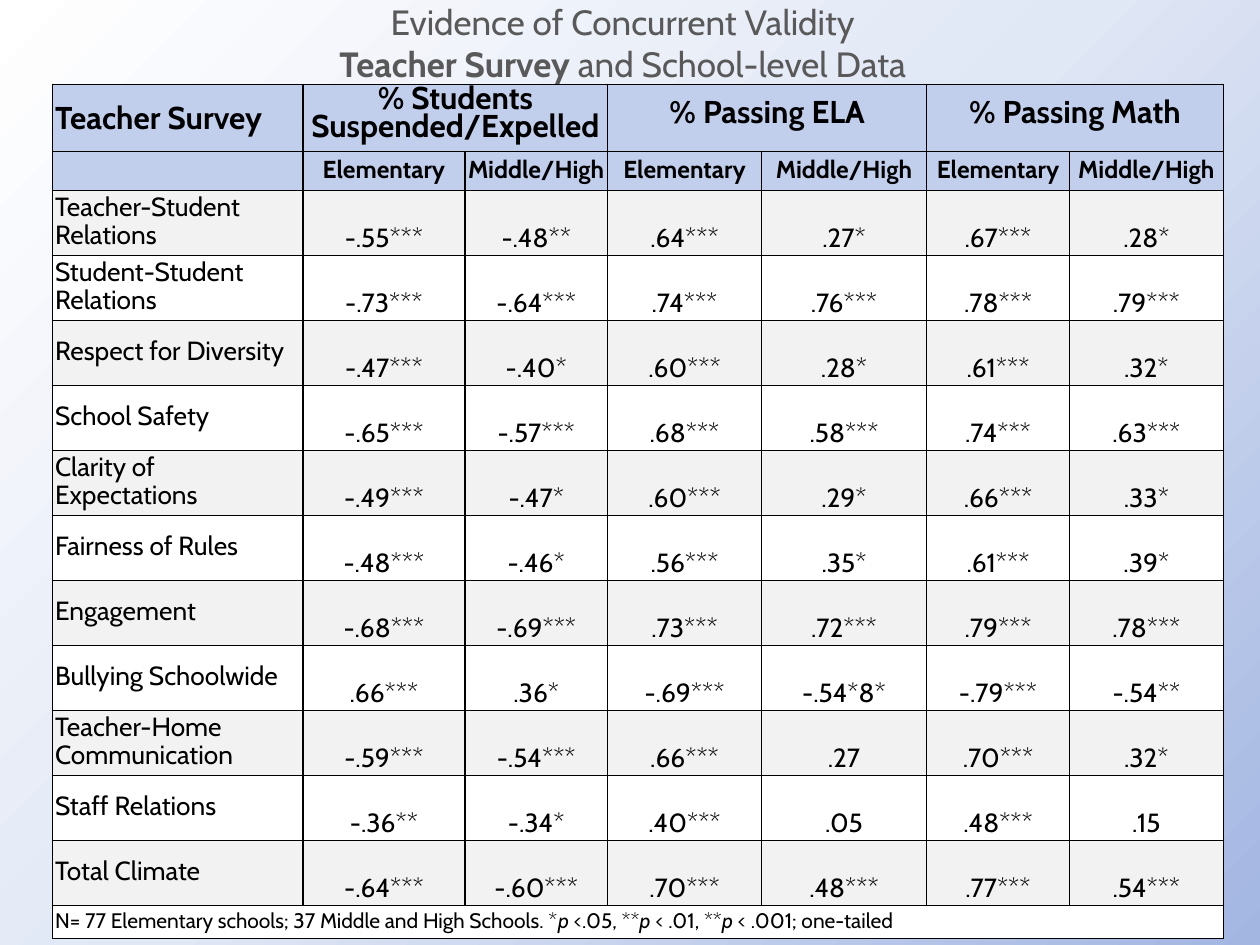
"""Build the slide on concurrent validity of the teacher survey."""
from pptx import Presentation
from pptx import util as u
from pptx.dml.color import RGBColor
from pptx.enum import text
from pptx.oxml import ns, parse_xml

FONT = "Cabin"
HEADER_FILL, ODD_FILL, EVEN_FILL = "C1CEEC", "F2F2F2", "FFFFFF"
BACKGROUND_STOPS = [(0, "A3B6E2"), (50, "E0E7F5"), (100, "FFFFFF")]

TITLE = [
    [("Evidence of Concurrent Validity ", "")],
    [("Teacher Survey ", "b"), ("and School-level Data ", "")],
]
MEASURES = ["% Students Suspended/Expelled", "% Passing ELA", "% Passing Math"]
LEVELS = ["Elementary", "Middle/High"]
SCALES = [
    ("Teacher-Student Relations", "-.55***", "-.48**", ".64***", ".27*", ".67***", ".28*"),
    ("Student-Student Relations", "-.73***", "-.64***", ".74***", ".76***", ".78***", ".79***"),
    ("Respect for Diversity", "-.47***", "-.40*", ".60***", ".28*", ".61***", ".32*"),
    ("School Safety", "-.65***", "-.57***", ".68***", ".58***", ".74***", ".63***"),
    ("Clarity of Expectations", "-.49***", "-.47*", ".60***", ".29*", ".66***", ".33*"),
    ("Fairness of Rules", "-.48***", "-.46*", ".56***", ".35*", ".61***", ".39*"),
    ("Engagement", "-.68***", "-.69***", ".73***", ".72***", ".79***", ".78***"),
    ("Bullying Schoolwide", ".66***", ".36*", "-.69***", "-.54*8*", "-.79***", "-.54**"),
    ("Teacher-Home Communication", "-.59***", "-.54***", ".66***", ".27", ".70***", ".32*"),
    ("Staff Relations", "-.36**", "-.34*", ".40***", ".05", ".48***", ".15"),
    ("Total Climate", "-.64***", "-.60***", ".70***", ".48***", ".77***", ".54***"),
]
FOOTNOTE = [
    ("N= 77 Elementary schools; 37 Middle and High Schools. *", ""), ("p ", "i"),
    ("<.05, **", ""), ("p", "i"), (" < .01, **", ""), ("p", "i"),
    (" < .001; one-tailed", ""),
]
COLUMN_WIDTHS = [5.05, 3.26, 2.88, 3.1, 3.33, 2.88, 3.1]
ROW_HEIGHTS = [1.35, 0.79] + [1.31] * len(SCALES) + [0.67]


def color(value):
    return RGBColor.from_string(value)


def add_runs(paragraph, parts, size, ink="000000"):
    for words, style in parts:
        run = paragraph.add_run()
        run.text = words
        run.font.name, run.font.size = FONT, u.Pt(size)
        run.font.bold, run.font.italic = "b" in style, "i" in style
        run.font.color.rgb = color(ink)


def paint_background(slide):
    stops = "".join(
        f'<a:gs pos="{place * 1000}"><a:srgbClr val="{shade}"/></a:gs>'
        for place, shade in BACKGROUND_STOPS
    )
    slide.element.cSld.insert(0, parse_xml(
        f'<p:bg {ns.nsdecls("p", "a")}><p:bgPr><a:gradFill><a:gsLst>{stops}</a:gsLst>'
        '<a:path path="circle"><a:fillToRect l="100000" t="100000"/></a:path>'
        '</a:gradFill><a:effectLst/></p:bgPr></p:bg>'
    ))


def add_title(slide):
    title = slide.shapes.add_textbox(u.Cm(0.2), 0, u.Cm(24.87), u.Cm(1.7))
    frame = title.text_frame
    frame.word_wrap = True
    frame.vertical_anchor = text.MSO_ANCHOR.MIDDLE
    paragraph = frame.paragraphs[0]
    paragraph.alignment = text.PP_ALIGN.CENTER
    for index, line in enumerate(TITLE):
        if index:
            paragraph.add_line_break()
        add_runs(paragraph, line, 20, "595959")


def style_cell(cell, fill):
    cell.fill.solid()
    cell.fill.fore_color.rgb = color(fill)
    properties = cell._tc.get_or_add_tcPr()
    for index, side in enumerate("LRTB"):
        properties.insert(index, parse_xml(
            f'<a:ln{side} {ns.nsdecls("a")} w="12700"><a:solidFill>'
            f'<a:srgbClr val="000000"/></a:solidFill></a:ln{side}>'
        ))


def write_cell(cell, parts, size, spacing=None, centered=False, middle=True, margins=(0.05, 0.05)):
    cell.margin_left = cell.margin_right = u.Cm(margins[0])
    cell.margin_top = cell.margin_bottom = u.Cm(margins[1])
    cell.vertical_anchor = text.MSO_ANCHOR.MIDDLE if middle else text.MSO_ANCHOR.TOP
    paragraph = cell.text_frame.paragraphs[0]
    paragraph.alignment = text.PP_ALIGN.CENTER if centered else text.PP_ALIGN.LEFT
    paragraph.line_spacing = spacing
    add_runs(paragraph, parts, size)
    if not parts:
        paragraph._p.append(parse_xml(f'<a:endParaRPr {ns.nsdecls("a")} sz="{size * 100}"/>'))


def add_correlations(slide):
    rows, columns = len(ROW_HEIGHTS), len(COLUMN_WIDTHS)
    grid = slide.shapes.add_table(
        rows, columns, u.Cm(1.06), u.Cm(1.7),
        u.Cm(sum(COLUMN_WIDTHS)), u.Cm(sum(ROW_HEIGHTS)),
    ).table
    for column, width in zip(grid.columns, COLUMN_WIDTHS):
        column.width = u.Cm(width)
    for row, height in zip(grid.rows, ROW_HEIGHTS):
        row.height = u.Cm(height)

    fills = [HEADER_FILL] * 2 + [(ODD_FILL, EVEN_FILL)[i % 2] for i in range(len(SCALES))]
    for row, fill in zip(grid.rows, fills + [EVEN_FILL]):
        for cell in row.cells:
            style_cell(cell, fill)

    leading = u.Pt(16)
    write_cell(grid.cell(0, 0), [("Teacher Survey", "b")], 18)
    write_cell(grid.cell(1, 0), [], 12)
    for index, measure in enumerate(MEASURES):
        left = 1 + index * len(LEVELS)
        grid.cell(0, left).merge(grid.cell(0, left + len(LEVELS) - 1))
        write_cell(grid.cell(0, left), [(measure, "b")], 18, leading, centered=True)
        for offset, level in enumerate(LEVELS):
            write_cell(grid.cell(1, left + offset), [(level, "b")], 14, leading, centered=True)

    for row, (scale, *values) in enumerate(SCALES, 2):
        write_cell(grid.cell(row, 0), [(scale, "")], 15, leading)
        for column, value in enumerate(values, 1):
            write_cell(grid.cell(row, column), [(value, "")], 15, 2.0,
                       centered=True, middle=False, margins=(0.18, 0))

    grid.cell(rows - 1, 0).merge(grid.cell(rows - 1, columns - 1))
    write_cell(grid.cell(rows - 1, 0), FOOTNOTE, 12, middle=False)


def main():
    deck = Presentation()
    deck.slide_width, deck.slide_height = u.Cm(25.4), u.Cm(19.05)
    slide = deck.slides.add_slide(deck.slide_layouts[6])
    paint_background(slide)
    add_title(slide)
    add_correlations(slide)
    deck.save("out.pptx")


if __name__ == "__main__":
    main()
